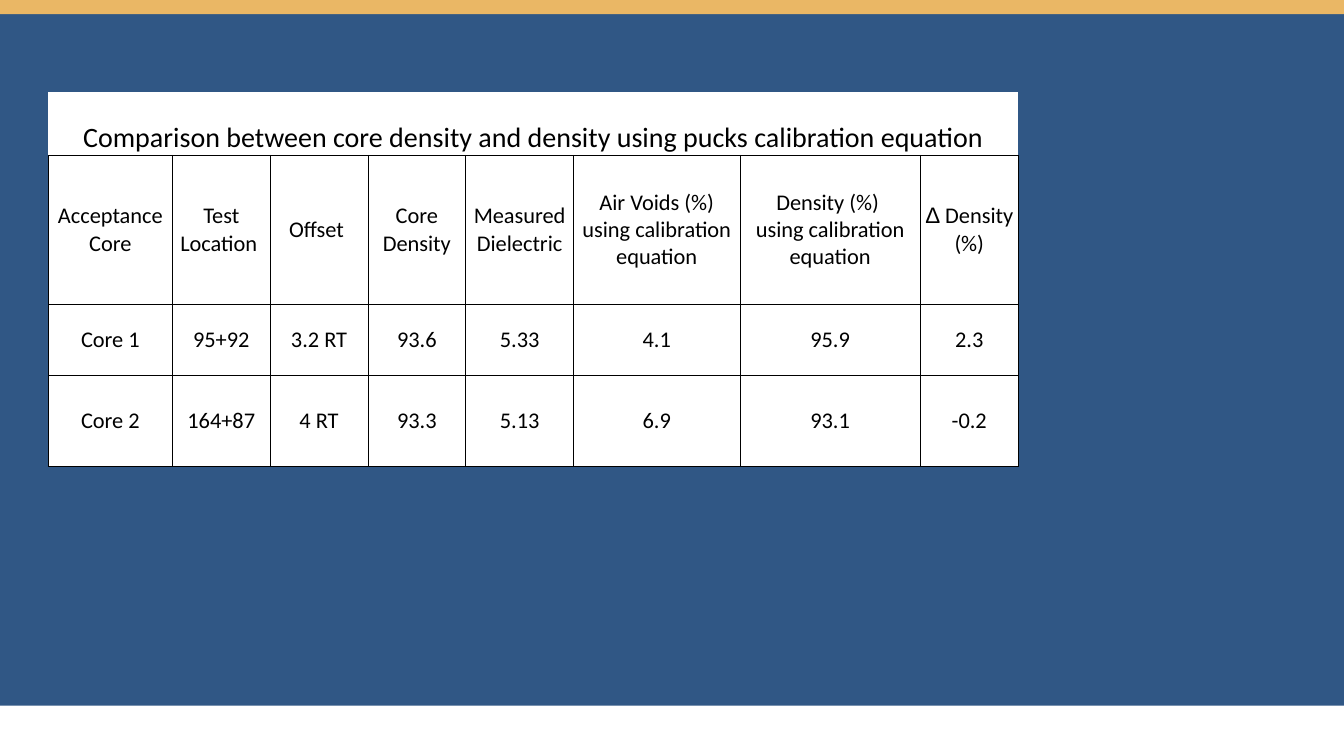
from lxml import etree
from pptx import Presentation
from pptx.dml.color import RGBColor
from pptx.enum.shapes import MSO_SHAPE
from pptx.enum.text import MSO_ANCHOR, PP_ALIGN
from pptx.oxml.ns import qn
from pptx.util import Inches, Pt

RECTANGLE = MSO_SHAPE.RECTANGLE
CENTER = PP_ALIGN.CENTER
MIDDLE, BOTTOM = MSO_ANCHOR.MIDDLE, MSO_ANCHOR.BOTTOM
COLORS = {"blue": "305785", "gold": "EAB765", "white": "FFFFFF", "black": "000000"}

CAPTION = "Comparison between core density and density using pucks calibration equation"
ROWS = [
    [CAPTION] + [""] * 7,
    ["Acceptance Core", "Test Location ", "Offset ", "Core Density", "Measured Dielectric",
     "Air Voids (%)\nusing calibration equation",
     "Density (%) \nusing calibration equation", "Δ Density (%)"],
    ["Core 1", "95+92", "3.2 RT", "93.6", "5.33", "4.1", "95.9", "2.3"],
    ["Core 2", "164+87", "4 RT", "93.3", "5.13", "6.9", "93.1", "-0.2"],
]
COLUMN_WIDTHS = [1.23, 0.97, 0.97, 0.97, 1.07, 1.65, 1.79, 0.97]
ROW_HEIGHTS = [0.63, 1.48, 0.7, 0.91]


def set_border(cell, side, points):
    """Draw one side (L, R, T or B) of a cell in black; zero points hides it."""
    line = etree.SubElement(cell._tc.get_or_add_tcPr(), qn(f"a:ln{side}"), w=str(Pt(points)))
    if points:
        fill = etree.SubElement(line, qn("a:solidFill"))
        etree.SubElement(fill, qn("a:srgbClr"), val=COLORS["black"])
    else:
        etree.SubElement(line, qn("a:noFill"))


prs = Presentation()
prs.slide_width, prs.slide_height = Inches(13.33), Inches(7.5)
slide = prs.slides.add_slide(prs.slide_layouts[6])

# Blue backdrop with a gold strip along the top
for color, height in [("blue", 7), ("gold", 0.14)]:
    band = slide.shapes.add_shape(RECTANGLE, 0, 0, prs.slide_width, Inches(height))
    band.shadow.inherit = False
    band.fill.solid()
    band.fill.fore_color.rgb = RGBColor.from_string(COLORS[color])
    band.line.fill.background()

# Core density comparison
comparison = slide.shapes.add_table(
    len(ROWS), len(COLUMN_WIDTHS), Inches(0.48), Inches(0.91),
    Inches(sum(COLUMN_WIDTHS)), Inches(sum(ROW_HEIGHTS))).table
comparison.first_row = False
comparison.horz_banding = False
for column, width in zip(comparison.columns, COLUMN_WIDTHS):
    column.width = Inches(width)
for row, height in zip(comparison.rows, ROW_HEIGHTS):
    row.height = Inches(height)
comparison.cell(0, 0).merge(comparison.cell(0, len(COLUMN_WIDTHS) - 1))

for r, texts in enumerate(ROWS):
    is_caption = r == 0
    for c, text in enumerate(texts):
        cell = comparison.cell(r, c)
        cell.margin_left = cell.margin_right = cell.margin_top = cell.margin_bottom = 0
        cell.vertical_anchor = BOTTOM if is_caption else MIDDLE

        # The last column is set off by heavier side lines
        borders = {"L": 1 if c == 7 else 0.5, "R": 1 if c >= 6 else 0.5, "T": 0.5, "B": 0.5}
        if is_caption:
            borders = {"L": 0, "R": 0, "T": 0, "B": 0.5}
        for side, points in borders.items():
            set_border(cell, side, points)
        cell.fill.solid()
        cell.fill.fore_color.rgb = RGBColor.from_string(COLORS["white"])

        paragraph = cell.text_frame.paragraphs[0]
        paragraph.alignment = CENTER
        paragraph.font.name = "Calibri"
        paragraph.font.size = Pt(20 if is_caption else 16)
        paragraph.font.color.rgb = RGBColor.from_string(COLORS["black"])
        if text.startswith("Δ"):
            delta = paragraph.add_run()
            delta.text = "Δ"
            delta.font.name = "Arial"
            paragraph.add_run().text = text[1:]
        elif text:
            paragraph.text = text

prs.save("out.pptx")
